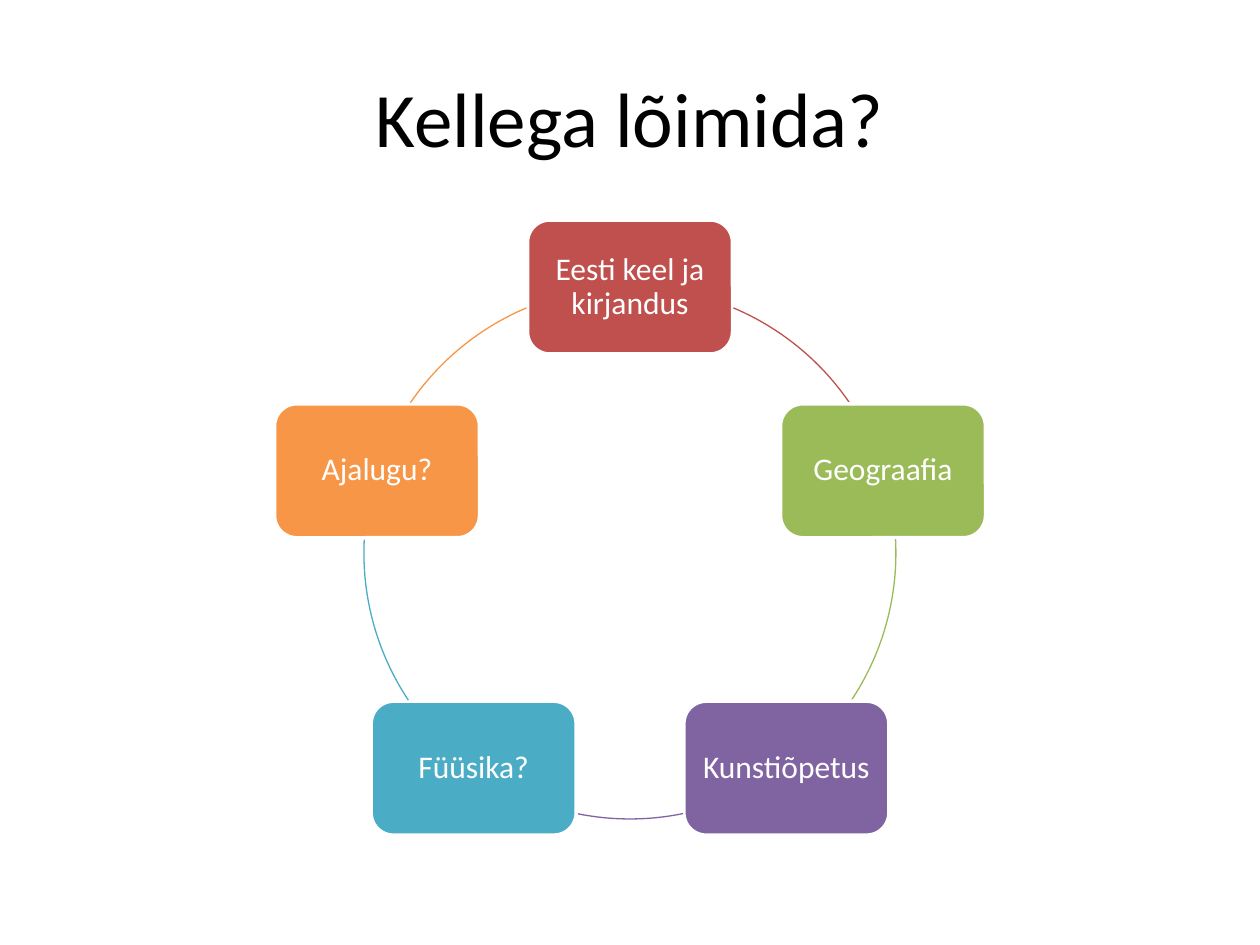
from math import cos, radians, sin

from pptx import Presentation
from pptx import util as u
from pptx.dml.color import RGBColor
from pptx.enum import shapes, text

PX = 914400 / 126
FONT = "Calibri"
BLACK = RGBColor(0x00, 0x00, 0x00)
WHITE = RGBColor(0xFF, 0xFF, 0xFF)
RED = RGBColor(0xC0, 0x50, 0x4D)
GREEN = RGBColor(0x9B, 0xBB, 0x59)
PURPLE = RGBColor(0x80, 0x64, 0xA2)
TEAL = RGBColor(0x4B, 0xAC, 0xC6)
ORANGE = RGBColor(0xF7, 0x96, 0x46)

# Subject, colour, then start and end of the following arc,
# in degrees clockwise from the right
SUBJECTS = [
    ("Eesti keel ja kirjandus", RED, 292.9, 325.6),
    ("Geograafia", GREEN, 357, 33.6),
    ("Kunstiõpetus", PURPLE, 78.5, 101.5),
    ("Füüsika?", TEAL, 146.4, 183),
    ("Ajalugu?", ORANGE, 214.4, 247.1),
]
NODE_WIDTH, NODE_HEIGHT = 205, 134


def px(length):
    return u.Emu(round(length * PX))


def style_text(shape, size, color):
    frame = shape.text_frame
    frame.word_wrap = True
    frame.vertical_anchor = text.MSO_ANCHOR.MIDDLE
    para = frame.paragraphs[0]
    para.alignment = text.PP_ALIGN.CENTER
    for span in para.runs:
        span.font.name = FONT
        span.font.size = u.Pt(size)
        span.font.color.rgb = color


def add_title(page, left, top, width, height):
    title = page.shapes.title
    title.left, title.top = px(left), px(top)
    title.width, title.height = px(width), px(height)
    title.text_frame.text = "Kellega lõimida?"
    style_text(title, 44, BLACK)


def add_node(page, center_x, center_y, label, color):
    node = page.shapes.add_shape(
        shapes.MSO_SHAPE.ROUNDED_RECTANGLE,
        px(center_x - NODE_WIDTH / 2), px(center_y - NODE_HEIGHT / 2),
        px(NODE_WIDTH), px(NODE_HEIGHT))
    node.shadow.inherit = False
    node.fill.solid()
    node.fill.fore_color.rgb = color
    node.line.color.rgb = WHITE
    node.line.width = u.Pt(2)
    frame = node.text_frame
    frame.text = label
    frame.margin_left = frame.margin_right = px(2)
    frame.margin_top = frame.margin_bottom = px(2)
    frame.paragraphs[0].line_spacing = 0.9
    style_text(node, 18, WHITE)


def add_arc(page, left, top, size, color, start, end):
    arc = page.shapes.add_shape(
        shapes.MSO_SHAPE.ARC, px(left), px(top), px(size), px(size))
    arc.shadow.inherit = False
    # One degree is 60000 units; an adjustment of 1 is 100000 units
    arc.adjustments[0] = start * 0.6
    arc.adjustments[1] = end * 0.6
    arc.fill.background()
    arc.line.color.rgb = color
    arc.line.width = u.Pt(0.75)


def add_cycle(page, left, top, size):
    """Spread the subjects evenly round the circle inside a square box."""
    radius = size / 2
    for index, (label, color, start, end) in enumerate(SUBJECTS):
        angle = radians(index * 360 / len(SUBJECTS) - 90)
        add_node(page, left + radius + radius * cos(angle),
                 top + radius + radius * sin(angle), label, color)
        add_arc(page, left, top, size, color, start, end)


def main():
    deck = Presentation()
    deck.slide_width, deck.slide_height = px(1260), px(945)
    page = deck.slides.add_slide(deck.slide_layouts[5])
    add_title(page, 63, 38, 1134, 158)
    add_cycle(page, 364, 287, 532)
    deck.save("out.pptx")


if __name__ == "__main__":
    main()
